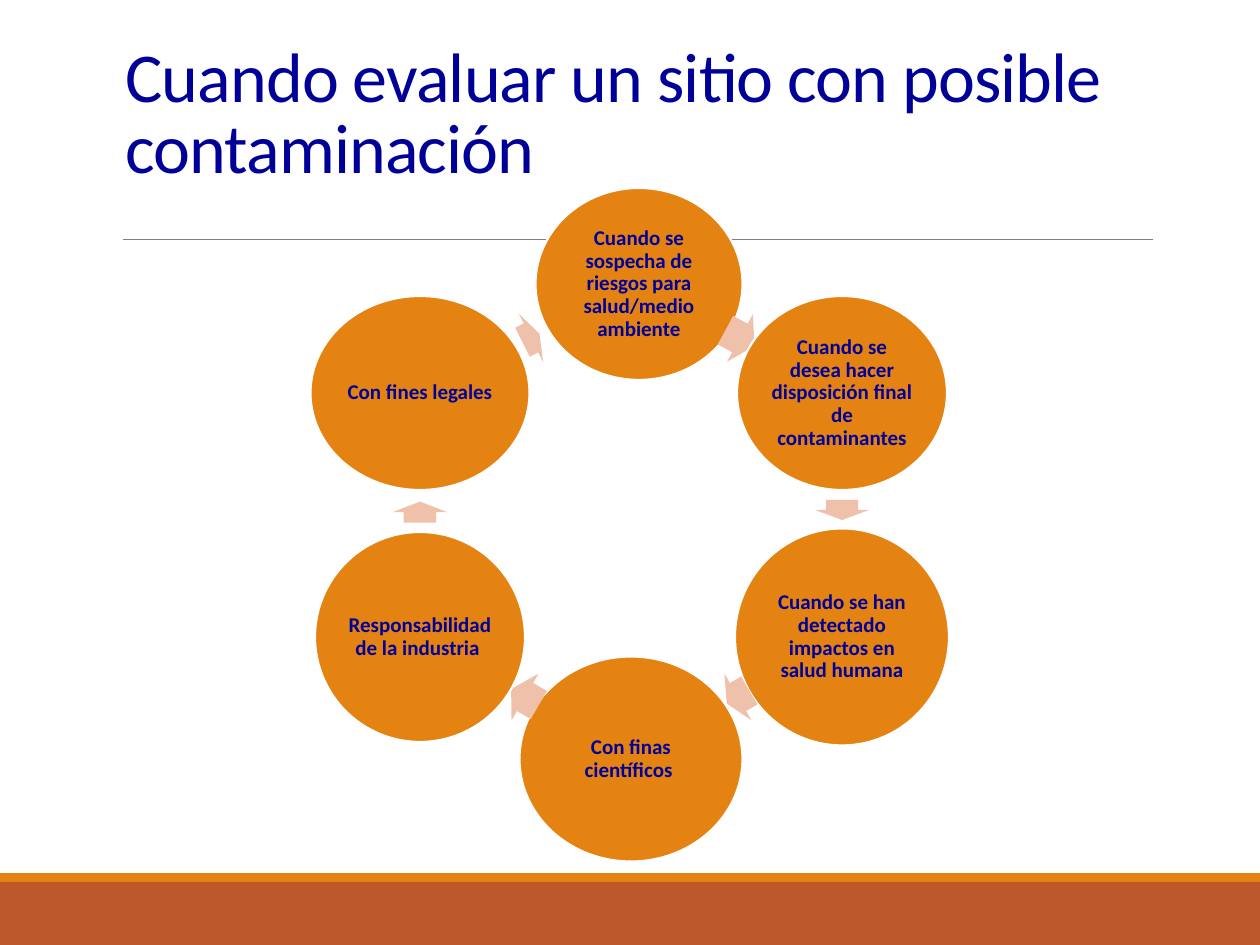
from dataclasses import dataclass

import pptx
import pptx.dml.color
import pptx.enum.shapes
import pptx.enum.text
import pptx.util
from pptx.oxml.ns import qn
from lxml import etree

SHAPE = pptx.enum.shapes.MSO_SHAPE
ALIGN = pptx.enum.text.PP_ALIGN
ANCHOR = pptx.enum.text.MSO_ANCHOR
PX_PER_INCH = 126


@dataclass(frozen=True)
class Theme:
    font: str = "Calibri"
    text: str = "000099"
    accent: str = "E48312"
    footer: str = "BD582C"
    arrow: str = "EFC1AB"
    rule: str = "808080"
    white: str = "FFFFFF"
    title_size: int = 40
    node_size: int = 12


@dataclass(frozen=True)
class Step:
    """A circle of the cycle and the arrow after it, placed by centres."""
    text: str
    cx: int
    cy: int
    w: int
    h: int
    arrow_cx: int
    arrow_cy: int
    arrow_length: int
    angle: float


THEME = Theme()
ARROW_WIDTH = 54
LEFT, RIGHT = 420, 842  # centres of the two side columns
STEPS = [
    Step("Cuando se sospecha de riesgos para salud/medio ambiente",
         639, 284, 207, 192, 740, 338, 33, 28.5),
    Step("Cuando se desea hacer disposición final de contaminantes",
         RIGHT, 393, 210, 194, RIGHT, 510, 20, 90),
    Step("Cuando se han detectado impactos en salud humana",
         RIGHT, 637, 214, 217, 738, 697, 26, 150),
    Step("Con finas científicos ",
         631, 759, 223, 205, 525, 697, 32, 210),
    Step("Responsabilidad de la industria ",
         LEFT, 637, 210, 210, LEFT, 512, 21, 270),
    Step("Con fines legales",
         LEFT, 393, 219, 194, 531, 338, 19, 333.3),
]


def px(n: float) -> int:
    return round(n * 914400 / PX_PER_INCH)


def rgb(color: str) -> pptx.dml.color.RGBColor:
    return pptx.dml.color.RGBColor.from_string(color)


def write(tf, text: str, *, size: int, bold: bool = False, align=ALIGN.LEFT,
          anchor=ANCHOR.TOP, line_spacing: float = 1.0, tracking: int = 0) -> None:
    tf.word_wrap = True
    tf.auto_size = pptx.enum.text.MSO_AUTO_SIZE.NONE
    tf.vertical_anchor = anchor
    p = tf.paragraphs[0]
    p.alignment = align
    p.line_spacing = line_spacing
    r = p.add_run()
    r.text = text
    r.font.name = THEME.font
    r.font.size = pptx.util.Pt(size)
    r.font.bold = bold
    r.font.color.rgb = rgb(THEME.text)
    if tracking:
        r._r.get_or_add_rPr().set("spc", str(tracking))


def add_shape(s, kind, x: float, y: float, w: int, h: int, fill: str):
    sp = s.shapes.add_shape(kind, px(x), px(y), px(w), px(h))
    sp.shadow.inherit = False
    sp.fill.solid()
    sp.fill.fore_color.rgb = rgb(fill)
    sp.line.fill.background()
    return sp


def add_rule(s, x1: int, x2: int, y: int) -> None:
    line = s.shapes.add_connector(pptx.enum.shapes.MSO_CONNECTOR.STRAIGHT,
                                  px(x1), px(y), px(x2), px(y))
    line.line.color.rgb = rgb(THEME.rule)
    line.line.width = pptx.util.Pt(0.5)
    etree.SubElement(line._element.spPr, qn("a:effectLst"))


def add_step(s, step: Step) -> None:
    sp = add_shape(s, SHAPE.OVAL, step.cx - step.w / 2, step.cy - step.h / 2,
                   step.w, step.h, THEME.accent)
    sp.line.color.rgb = rgb(THEME.white)
    sp.line.width = pptx.util.Pt(1.25)
    tf = sp.text_frame
    tf.margin_left = tf.margin_right = pptx.util.Inches(0.02)
    tf.margin_top = tf.margin_bottom = pptx.util.Inches(0.02)
    write(tf, step.text, size=THEME.node_size, bold=True, align=ALIGN.CENTER,
          anchor=ANCHOR.MIDDLE, line_spacing=0.9)

    arrow = add_shape(s, SHAPE.RIGHT_ARROW, step.arrow_cx - step.arrow_length / 2,
                      step.arrow_cy - ARROW_WIDTH / 2, step.arrow_length,
                      ARROW_WIDTH, THEME.arrow)
    arrow.adjustments[0] = 0.6
    arrow.adjustments[1] = 0.5
    arrow.rotation = step.angle


def main() -> None:
    prs = pptx.Presentation()
    prs.slide_width, prs.slide_height = px(1260), px(945)
    s = prs.slides.add_slide(prs.slide_layouts[5])

    # Footer bands and title rule
    add_shape(s, SHAPE.RECTANGLE, 0, 882, 1260, 63, THEME.footer)
    add_shape(s, SHAPE.RECTANGLE, 0, 873, 1260, 9, THEME.accent)
    add_rule(s, 123, 1153, 239)

    # Title
    title = s.shapes.title
    title.left, title.top, title.width, title.height = px(113), px(39), px(1040), px(200)
    write(title.text_frame, "Cuando evaluar un sitio con posible contaminación",
          size=THEME.title_size, line_spacing=0.85, tracking=-50)

    # Cycle of reasons
    for step in STEPS:
        add_step(s, step)

    prs.save("out.pptx")


if __name__ == "__main__":
    main()
